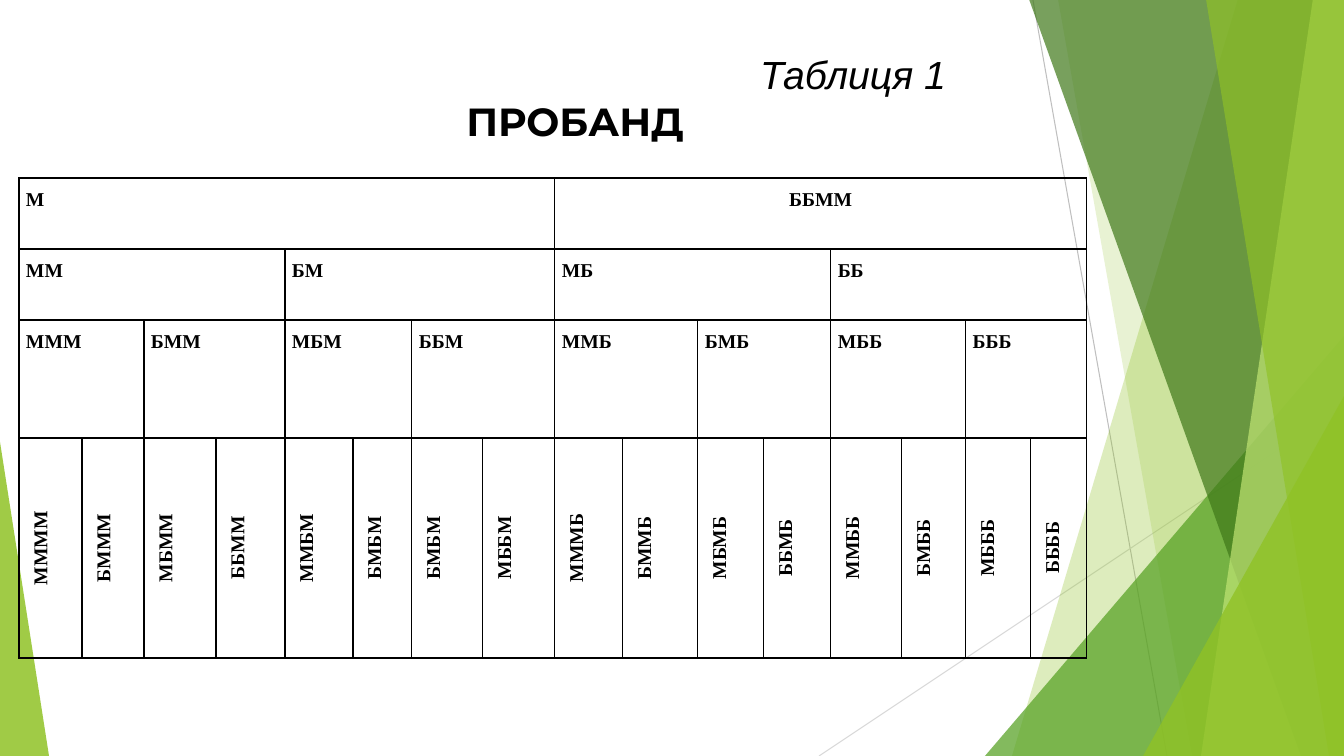
from itertools import pairwise

from lxml.etree import SubElement
from pptx import Presentation
from pptx.dml.color import RGBColor
from pptx.enum.shapes import MSO_CONNECTOR, MSO_SHAPE
from pptx.enum.text import MSO_ANCHOR, PP_ALIGN
from pptx.oxml.ns import qn
from pptx.util import Pt

PX = 12192000 / 1344
WIDTH, HEIGHT = 1344, 756
BLACK = "000000"

LINES = [((1033, 0), (1167, HEIGHT), "BFBFBF"), ((WIDTH, 406), (819, HEIGHT), "D9D9D9")]
# band: top x, bottom x, both reaching the right edge; triangle: left, top, width, apex
DECOR = [
    ("band", (1238, 1012), "90C226", 30),
    ("band", (1058, 1192), "90C226", 20),
    ("triangle", (985, 336, 359, 1), "54A021", 72),
    ("band", (1029, 1301), "3F7819", 70),
    ("band", (1313, 1201), "C0E474", 70),
    ("band", (1206, 1329), "90C226", 65),
    ("triangle", (1143, 396, 201, 1), "90C226", 80),
    ("triangle", (0, 442, 49, 0), "90C226", 85),
]
TITLE_BOX = (70, 45, 1010, 145)
TITLE = [
    ("Таблиця 1", PP_ALIGN.LEFT, 680, {"name": "Arial", "italic": True, "bold": False}),
    ("ПРОБАНД", PP_ALIGN.CENTER, 0, {"name": "Montserrat", "italic": False, "bold": True}),
]
COL_EDGES = [19, 82, 144, 216, 285, 353, 412, 483, 555,
             623, 698, 764, 831, 902, 966, 1031, 1087]
ROW_EDGES = [178, 249, 320, 438, 658]
GENERATIONS = [
    ["М", "ББММ"],
    ["ММ", "БМ", "МБ", "ББ"],
    ["МММ", "БММ", "МБМ", "ББМ", "ММБ", "БМБ", "МББ", "БББ"],
    ["ММММ", "БМММ", "МБММ", "ББММ", "ММБМ", "БМБМ", "БМБМ", "МББМ",
     "МММБ", "БММБ", "МБМБ", "ББМБ", "ММББ", "БМББ", "МБББ", "ББББ"],
]
CELL_FONT = {"name": "Times New Roman", "size": Pt(14), "bold": True}
CELL_FORMAT = {"margin_left": 7, "margin_right": 7, "margin_top": 0, "margin_bottom": 0}


def px(n):
    return round(n * PX)


def rgb(color):
    return RGBColor.from_string(color)


def set_font(r, values):
    for name, value in values.items():
        setattr(r.font, name, value)
    r.font.color.rgb = rgb(BLACK)


def add_line(shapes, start, end, color):
    line = shapes.add_connector(MSO_CONNECTOR.STRAIGHT, *map(px, start + end))
    line.line.color.rgb = rgb(color)
    line.line.width = Pt(0.75)
    SubElement(line.element.spPr, qn("a:effectLst"))


def add_decor(shapes, kind, place, color, opacity):
    if kind == "band":
        top_x, bottom_x = place
        builder = shapes.build_freeform(top_x, -1, scale=PX)
        builder.add_line_segments([(WIDTH, -1), (WIDTH, HEIGHT), (bottom_x, HEIGHT)])
        sp = builder.convert_to_shape()
    else:
        left, top, width, apex = place
        sp = shapes.add_shape(MSO_SHAPE.ISOSCELES_TRIANGLE,
                              *map(px, (left, top, width, HEIGHT - top)))
        sp.adjustments[0] = apex
    sp.shadow.inherit = False
    sp.line.fill.background()
    sp.fill.solid()
    sp.fill.fore_color.rgb = rgb(color)
    clr = sp.element.spPr.find(".//" + qn("a:srgbClr"))
    SubElement(clr, qn("a:alpha"), val=str(opacity * 1000))


def fill_title(title):
    for name, value in zip(("left", "top", "width", "height"), TITLE_BOX):
        setattr(title, name, px(value))
    tf = title.text_frame
    tf.word_wrap = True
    tf.vertical_anchor = MSO_ANCHOR.TOP
    for i, (text, align, indent, font) in enumerate(TITLE):
        p = tf.add_paragraph() if i else tf.paragraphs[0]
        p.alignment = align
        p._p.get_or_add_pPr().set("marL", str(px(indent)))
        r = p.add_run()
        r.text = text
        set_font(r, font | {"size": Pt(28)})


def add_borders(cell):
    tc_pr = cell._tc.get_or_add_tcPr()
    for side in "LRTB":
        ln = SubElement(tc_pr, qn(f"a:ln{side}"), w=str(Pt(1)))
        SubElement(SubElement(ln, qn("a:solidFill")), qn("a:srgbClr"), val=BLACK)


def write_cell(cell, text, align, upright):
    for name, value in CELL_FORMAT.items():
        setattr(cell, name, px(value))
    if upright:
        cell.vertical_anchor = MSO_ANCHOR.MIDDLE
        cell._tc.get_or_add_tcPr().set("vert", "vert270")
    p = cell.text_frame.paragraphs[0]
    p.alignment = align
    p.line_spacing = 1.5
    r = p.add_run()
    r.text = text
    set_font(r, CELL_FONT)


def add_pedigree(shapes):
    cols, rows = len(COL_EDGES) - 1, len(ROW_EDGES) - 1
    left, top = COL_EDGES[0], ROW_EDGES[0]
    box = (left, top, COL_EDGES[-1] - left, ROW_EDGES[-1] - top)
    table = shapes.add_table(rows, cols, *map(px, box)).table
    table.first_row = table.horz_banding = False
    for col, (a, b) in zip(table.columns, pairwise(COL_EDGES)):
        col.width = px(b - a)
    for row, (a, b) in zip(table.rows, pairwise(ROW_EDGES)):
        row.height = px(b - a)
    for cell in table.iter_cells():
        add_borders(cell)
        cell.fill.background()
    for i, names in enumerate(GENERATIONS):
        span = cols // len(names)
        for j, name in enumerate(names):
            cell = table.cell(i, j * span)
            if span > 1:
                cell.merge(table.cell(i, (j + 1) * span - 1))
            centred = span == 1 or (i, j) == (0, 1)
            write_cell(cell, name, PP_ALIGN.CENTER if centred else PP_ALIGN.LEFT, span == 1)


def main():
    prs = Presentation()
    prs.slide_width, prs.slide_height = px(WIDTH), px(HEIGHT)
    slide = prs.slides.add_slide(prs.slide_layouts[5])
    shapes = slide.shapes
    for line in LINES:
        add_line(shapes, *line)
    for decor in DECOR:
        add_decor(shapes, *decor)
    title = shapes.title
    fill_title(title)
    title.element.getparent().append(title.element)
    add_pedigree(shapes)
    prs.save("out.pptx")


if __name__ == "__main__":
    main()
